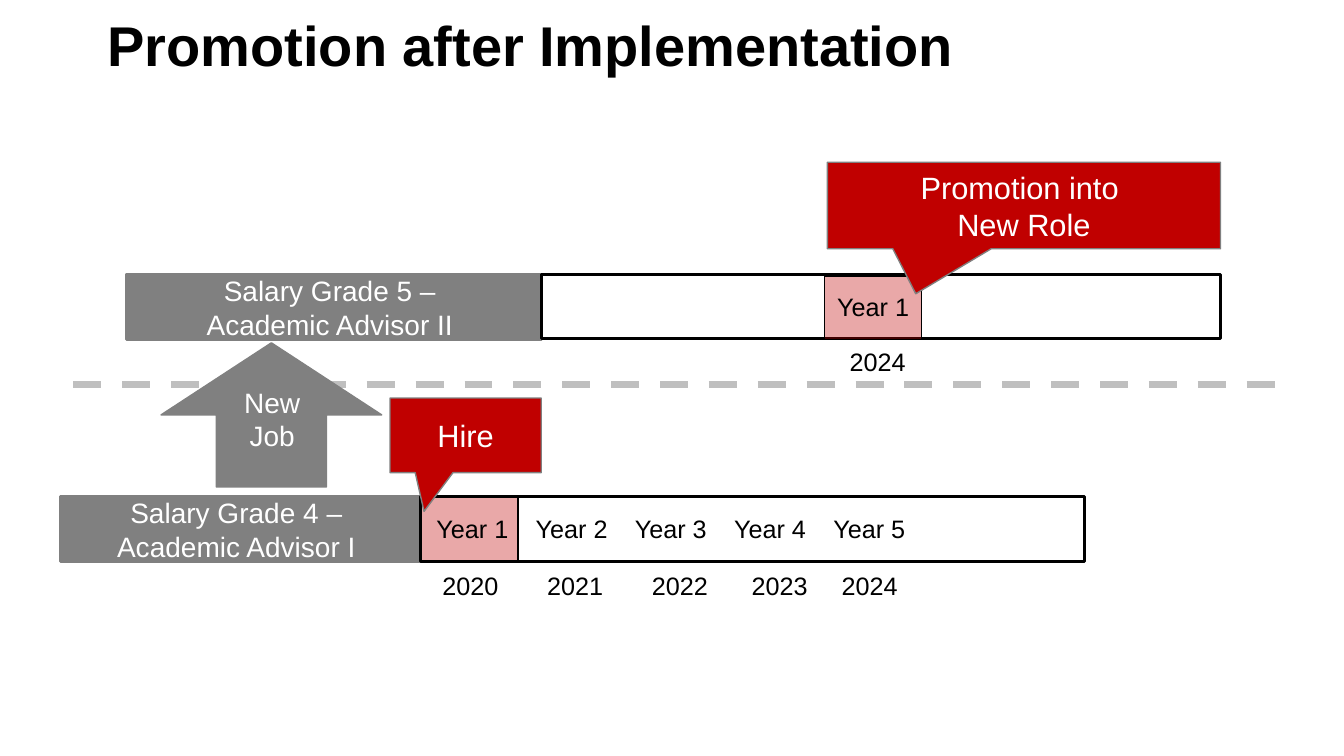
from lxml.etree import SubElement
from pptx import Presentation
from pptx.dml.color import RGBColor
from pptx.enum.dml import MSO_LINE
from pptx.enum.shapes import MSO_CONNECTOR, MSO_SHAPE
from pptx.enum.text import MSO_ANCHOR, MSO_AUTO_SIZE, PP_ALIGN
from pptx.oxml.ns import qn
from pptx.util import Cm, Pt

BLACK = RGBColor(0, 0, 0)
WHITE = RGBColor(255, 255, 255)
GRAY = RGBColor(0x80, 0x80, 0x80)
LIGHT_GRAY = RGBColor(0xBF, 0xBF, 0xBF)
RED = RGBColor(0xC0, 0, 0)

# Lengths are centimetres; boxes are left, top, width, height.
TITLE = "Promotion after Implementation"
TITLE_BOX = (2.46, 0.13, 31.4, 1.96)
BAND_HEIGHT = 1.63
MARK_SIZE = (2.44, 1.6)
YEAR_SIZE = (2.4, 1.02)
DATE_SIZE = (2.06, 1.02)
YEAR_STEP = 2.5

LOWER_GRADE = {
    "label": ["Salary Grade 4 – ", "Academic Advisor I "],
    "label_left": 1.52, "label_top": 12.52, "bar_left": 10.59, "bar_top": 12.52, "bar_width": 16.74,
    "mark": (10.62, 12.52),
    "years": ["Year 1", "Year 2", "Year 3", "Year 4", "Year 5"], "first_year": (10.75, 12.82),
    "dates": [("2020", 10.9), ("2021", 13.54), ("2022", 16.18), ("2023", 18.69), ("2024", 20.96)],
    "dates_top": 14.25,
    "callout": ["Hire"], "callout_box": (9.83, 10.03, 3.81, 1.88),
}
UPPER_GRADE = {
    "label": ["Salary Grade 5 – ", "Academic Advisor II "],
    "label_left": 3.18, "label_top": 6.93, "bar_left": 13.64, "bar_top": 6.91, "bar_width": 17.12,
    "mark": (20.78, 6.96),
    "years": ["Year 1"], "first_year": (20.85, 7.21),
    "dates": [("2024", 21.16)], "dates_top": 8.59,
    "callout": ["Promotion into ", "New Role"], "callout_box": (20.85, 4.09, 9.91, 2.18),
}
DIVIDER = (1.85, 9.7, 32.36, 9.7)
ARROW_BOX = (4.06, 8.64, 5.56, 3.63)
ARROW_LABEL = ["New", "Job"]
ARROW_LABEL_BOX = (5.74, 9.58, 2.24, 1.96)


def set_text(shape, lines, size, color=BLACK, align=PP_ALIGN.LEFT, anchor=MSO_ANCHOR.TOP, bold=False):
    frame = shape.text_frame
    frame.word_wrap = True
    frame.auto_size = MSO_AUTO_SIZE.NONE
    frame.vertical_anchor = anchor
    frame.text = "\n".join(lines)
    for paragraph in frame.paragraphs:
        paragraph.alignment = align
        font = paragraph.font
        font.name, font.size, font.bold = "Arial", Pt(size), bold
        font.color.rgb = color


def add_text(slide, box, lines, size, **text_format):
    set_text(slide.shapes.add_textbox(*map(Cm, box)), lines, size, **text_format)


def add_shape(slide, kind, box, fill, line, line_width, opacity=None):
    shape = slide.shapes.add_shape(kind, *map(Cm, box))
    shape.shadow.inherit = False
    shape.fill.solid()
    shape.fill.fore_color.rgb = fill
    shape.line.color.rgb = line
    shape.line.width = Pt(line_width)
    if opacity is not None:
        color = shape.element.spPr.find(qn("a:solidFill"))[0]
        SubElement(color, qn("a:alpha")).set("val", str(opacity * 1000))
    return shape


def add_bars(slide, grade):
    label_box = (grade["label_left"], grade["label_top"],
                 grade["bar_left"] - grade["label_left"], BAND_HEIGHT)
    label = add_shape(slide, MSO_SHAPE.RECTANGLE, label_box, GRAY, GRAY, 2.25)
    set_text(label, grade["label"], 20, color=WHITE, align=PP_ALIGN.CENTER, anchor=MSO_ANCHOR.MIDDLE)
    bar_box = (grade["bar_left"], grade["bar_top"], grade["bar_width"], BAND_HEIGHT)
    add_shape(slide, MSO_SHAPE.RECTANGLE, bar_box, WHITE, BLACK, 2.25)


def add_timeline(slide, grade):
    """Add the marked year, the year and date labels, and the callout."""
    add_shape(slide, MSO_SHAPE.RECTANGLE, grade["mark"] + MARK_SIZE, RED, BLACK, 1, opacity=34)
    left, top = grade["first_year"]
    for index, year in enumerate(grade["years"]):
        add_text(slide, (left + index * YEAR_STEP, top, *YEAR_SIZE), [year], 18)
    for date, date_left in grade["dates"]:
        add_text(slide, (date_left, grade["dates_top"], *DATE_SIZE), [date], 18)
    callout = add_shape(slide, MSO_SHAPE.RECTANGULAR_CALLOUT, grade["callout_box"], RED, GRAY, 1)
    callout.adjustments[0] = -0.275
    callout.adjustments[1] = 1.02
    set_text(callout, grade["callout"], 22, color=WHITE, align=PP_ALIGN.CENTER, anchor=MSO_ANCHOR.MIDDLE)


def add_divider(slide):
    divider = slide.shapes.add_connector(MSO_CONNECTOR.STRAIGHT, *map(Cm, DIVIDER))
    divider.line.color.rgb = LIGHT_GRAY
    divider.line.width = Pt(5)
    divider.line.dash_style = MSO_LINE.DASH
    SubElement(divider.element.spPr, qn("a:effectLst"))


def main():
    presentation = Presentation()
    presentation.slide_width, presentation.slide_height = Cm(33.87), Cm(19.05)
    slide = presentation.slides.add_slide(presentation.slide_layouts[5])
    title = slide.shapes.title
    title.left, title.top, title.width, title.height = map(Cm, TITLE_BOX)
    set_text(title, [TITLE], 40, bold=True)

    add_bars(slide, LOWER_GRADE)
    add_timeline(slide, LOWER_GRADE)
    add_bars(slide, UPPER_GRADE)
    add_divider(slide)
    add_shape(slide, MSO_SHAPE.UP_ARROW, ARROW_BOX, GRAY, GRAY, 1)
    add_text(slide, ARROW_LABEL_BOX, ARROW_LABEL, 20, color=WHITE, align=PP_ALIGN.CENTER)
    add_timeline(slide, UPPER_GRADE)
    presentation.save("out.pptx")


if __name__ == "__main__":
    main()
